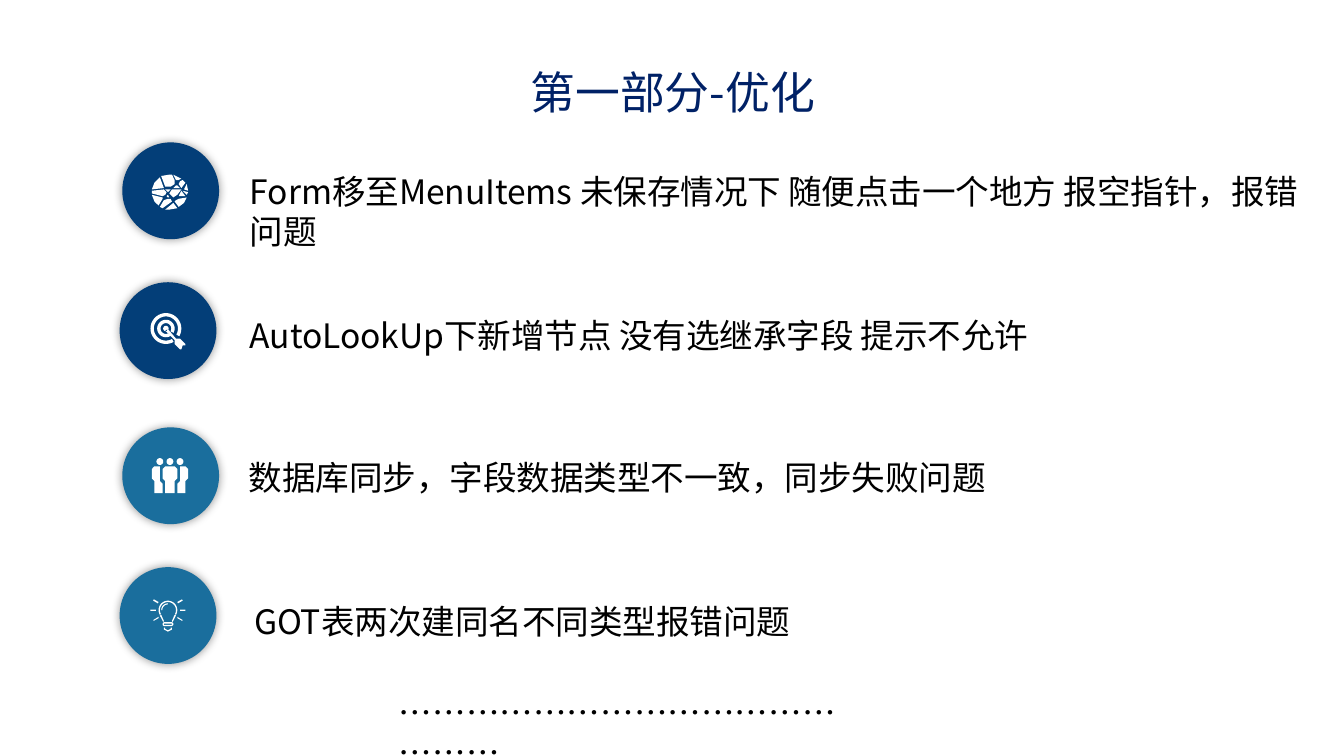
from dataclasses import dataclass
from math import cos, radians, sin

from lxml import etree
from pptx import Presentation
from pptx.dml.color import RGBColor
from pptx.enum.shapes import MSO_SHAPE
from pptx.enum.text import MSO_ANCHOR, MSO_AUTO_SIZE, PP_ALIGN
from pptx.oxml.ns import qn
from pptx.util import Inches, Pt

OVAL = MSO_SHAPE.OVAL
TOP = MSO_ANCHOR.TOP
GROW = MSO_AUTO_SIZE.SHAPE_TO_FIT_TEXT
CENTER, LEFT = PP_ALIGN.CENTER, PP_ALIGN.LEFT
TITLE_ONLY = 5
FONT = "Noto Sans CJK SC"
COLORS = {"title": "002166", "navy": "033E78", "teal": "1A6E9D",
          "white": "FFFFFF", "text": "000000"}
PAGE_WIDTH = 10
PAGE_HEIGHT = PAGE_WIDTH * 9 / 16
DISC_SIZE = 0.72
ICON_UNIT = 0.01

Outline = list[tuple[float, float]]


@dataclass
class Item:
    text: str
    left: float
    top: float
    width: float
    height: float


@dataclass
class Badge:
    left: float
    top: float
    color: str
    icon_left: float
    icon_top: float
    icon: list[Outline]


def arc(x: float, y: float, radius: float, start: int, end: int) -> Outline:
    return [(x + radius * cos(radians(angle)), y + radius * sin(radians(angle)))
            for angle in range(start, end + 1, 10)]


def band(x: float, y: float, outer: float, inner: float, start: int, end: int) -> Outline:
    return arc(x, y, outer, start, end) + arc(x, y, inner, start, end)[::-1]


def mirror(outline: Outline, width: float) -> Outline:
    return [(width - x, y) for x, y in outline]


GLOBE = [
    [(16, 21), (19, 25), (13, 26), (10, 26)],
    [(12, 18), (14, 18), (15, 20), (8, 25), (6, 24), (9, 19)],
    [(26, 17), (24, 21), (20, 24), (17, 20), (18, 19), (20, 18)],
    [(0, 15), (8, 17), (8, 18), (5, 23), (2, 20)],
    [(12, 15), (13, 17), (12, 17), (11, 16)],
    [(22, 12), (25, 16), (20, 16)],
    [(23, 12), (27, 13), (26, 15)],
    [(9, 11), (11, 13), (10, 15), (8, 16), (0, 14), (0, 12)],
    [(15, 11), (22, 11), (19, 15), (16, 17), (13, 14)],
    [(14, 11), (12, 13), (10, 11)],
    [(18, 8), (19, 8), (21, 10), (16, 10)],
    [(26, 7), (27, 12), (24, 11)],
    [(23, 4), (25, 6), (22, 10), (20, 7), (21, 5)],
    [(6, 2), (9, 10), (0, 11), (2, 6)],
    [(16, 0), (22, 3), (20, 4), (18, 4)],
    [(13, 0), (15, 0), (17, 4), (17, 7), (14, 9), (10, 9), (7, 1)],
]
TARGET = [band(11.5, 11.5, outer, inner, 60, 390)
          for outer, inner in ((11.5, 9), (6.5, 4), (2, 0))] + [
    [(12, 12), (13, 12), (19, 19), (22, 19), (26, 23), (26, 24), (24, 24),
     (23, 27), (22, 27), (18, 23), (18, 20), (11, 13)],
]
SIDE_PERSON = [(2, 6), (6, 6), (6, 17), (8, 19), (8, 26), (2, 26), (2, 17), (0, 15), (0, 8)]
PEOPLE = [arc(x, 2.5, 2.5, 0, 350) for x in (6, 13.5, 21)] + [
    SIDE_PERSON,
    mirror(SIDE_PERSON, 27),
    [(10, 6), (17, 6), (19, 8), (19, 15), (17, 17), (17, 26), (10, 26),
     (10, 17), (8, 15), (8, 8)],
]
BULB_SIDE = [
    [(7, 12), (8, 11.5), (10, 16), (9.5, 17), (9, 16)],
    [(6, 13), (6, 14), (2.5, 16), (2, 15.5)],
    [(0, 7.7), (4, 7.7), (4, 8.5), (0, 8.5)],
    [(2.5, 0), (6, 2), (5.5, 3), (2, 1)],
]
BULB = BULB_SIDE + [mirror(outline, 26) for outline in BULB_SIDE] + [
    band(13, 8, 7, 6, 150, 390),
    band(13, 8, 5, 4.2, 180, 270),
    [(10, 17), (16, 17), (17, 18), (17, 19), (16, 20), (10, 20), (9, 19), (9, 18)],
    [(10, 18), (16, 18), (16, 19), (10, 19)],
    [(10, 21), (11, 21), (11, 22), (13, 23), (15, 22), (15, 21), (16, 21),
     (16, 22.5), (13, 24), (10, 22.5)],
]

BADGES = [
    Badge(0.91, 1.06, "navy", 1.13, 1.3, GLOBE),
    Badge(0.91, 3.18, "teal", 1.13, 3.41, PEOPLE),
    Badge(0.89, 4.22, "teal", 1.12, 4.46, BULB),
    Badge(0.89, 2.1, "navy", 1.12, 2.33, TARGET),
]
ITEMS = [
    Item("Form移至MenuItems 未保存情况下 随便点击一个地方 报空指针，报错问题", 1.86, 1.27, 8, 0.61),
    Item("AutoLookUp下新增节点 没有选继承字段 提示不允许", 1.86, 2.34, 8, 0.3),
    Item("数据库同步，字段数据类型不一致，同步失败问题", 1.85, 3.4, 8, 0.3),
    Item("GOT表两次建同名不同类型报错问题", 1.89, 4.47, 7.92, 0.3),
]
TITLE = Item("第一部分-优化", 3.67, 0.45, 2.67, 0.46)
ELLIPSIS = Item("…………………………………………", 2.87, 5.1, 3.46, 0.4)


def fill_shape(shape, color: str) -> None:
    shape.shadow.inherit = False
    shape.fill.solid()
    shape.fill.fore_color.rgb = RGBColor.from_string(COLORS[color])
    shape.line.fill.background()


def add_glow(shape) -> None:
    effects = shape._element.spPr.find(qn("a:effectLst"))
    shadow = etree.SubElement(effects, qn("a:outerShdw"), blurRad=str(Pt(5)), dist="0", dir="0")
    tint = etree.SubElement(shadow, qn("a:srgbClr"), val=COLORS["text"])
    etree.SubElement(tint, qn("a:alpha"), val="40000")


def draw_badge(page, badge: Badge) -> None:
    group = page.shapes.add_group_shape()
    disc = group.shapes.add_shape(OVAL, Inches(badge.left), Inches(badge.top),
                                  Inches(DISC_SIZE), Inches(DISC_SIZE))
    fill_shape(disc, badge.color)
    add_glow(disc)
    outlines = [[(Inches(badge.icon_left + x * ICON_UNIT), Inches(badge.icon_top + y * ICON_UNIT))
                 for x, y in outline] for outline in badge.icon]
    builder = group.shapes.build_freeform(*outlines[0][0])
    builder.add_line_segments(outlines[0][1:])
    for outline in outlines[1:]:
        builder.move_to(*outline[0])
        builder.add_line_segments(outline[1:])
    fill_shape(builder.convert_to_shape(), "white")


def write_text(box, item: Item, size: int, color: str, align, insets: tuple[float, float]):
    box.left, box.top = Inches(item.left), Inches(item.top)
    box.width, box.height = Inches(item.width), Inches(item.height)
    frame = box.text_frame
    frame.text = item.text
    frame.word_wrap = True
    frame.auto_size = GROW
    frame.vertical_anchor = TOP
    frame.margin_left = frame.margin_right = Inches(insets[0])
    frame.margin_top = frame.margin_bottom = Inches(insets[1])
    para = frame.paragraphs[0]
    para.alignment = align
    span = para.runs[0]
    span.font.size = Pt(size)
    span.font.name = FONT
    span.font.color.rgb = RGBColor.from_string(COLORS[color])
    etree.SubElement(span.font._element, qn("a:ea"), typeface=FONT)
    return span


def add_text(page, item: Item, insets: tuple[float, float]):
    box = page.shapes.add_textbox(0, 0, 0, 0)
    return write_text(box, item, 18, "text", LEFT, insets)


def outline_text(span) -> None:
    properties = span.font._element
    properties.set("spc", "-6")
    line = etree.Element(qn("a:ln"), w=str(Pt(0.46)))
    paint = etree.SubElement(line, qn("a:solidFill"))
    etree.SubElement(paint, qn("a:srgbClr"), val=COLORS["text"])
    properties.insert(0, line)


def main() -> None:
    deck = Presentation()
    deck.slide_width, deck.slide_height = Inches(PAGE_WIDTH), Inches(PAGE_HEIGHT)
    page = deck.slides.add_slide(deck.slide_layouts[TITLE_ONLY])
    write_text(page.shapes.title, TITLE, 24, "title", CENTER, (0.06, 0.03))
    for badge in BADGES:
        draw_badge(page, badge)
    for item in ITEMS:
        outline_text(add_text(page, item, (0, 0)))
    add_text(page, ELLIPSIS, (0.1, 0.05))
    deck.save("out.pptx")


if __name__ == "__main__":
    main()
